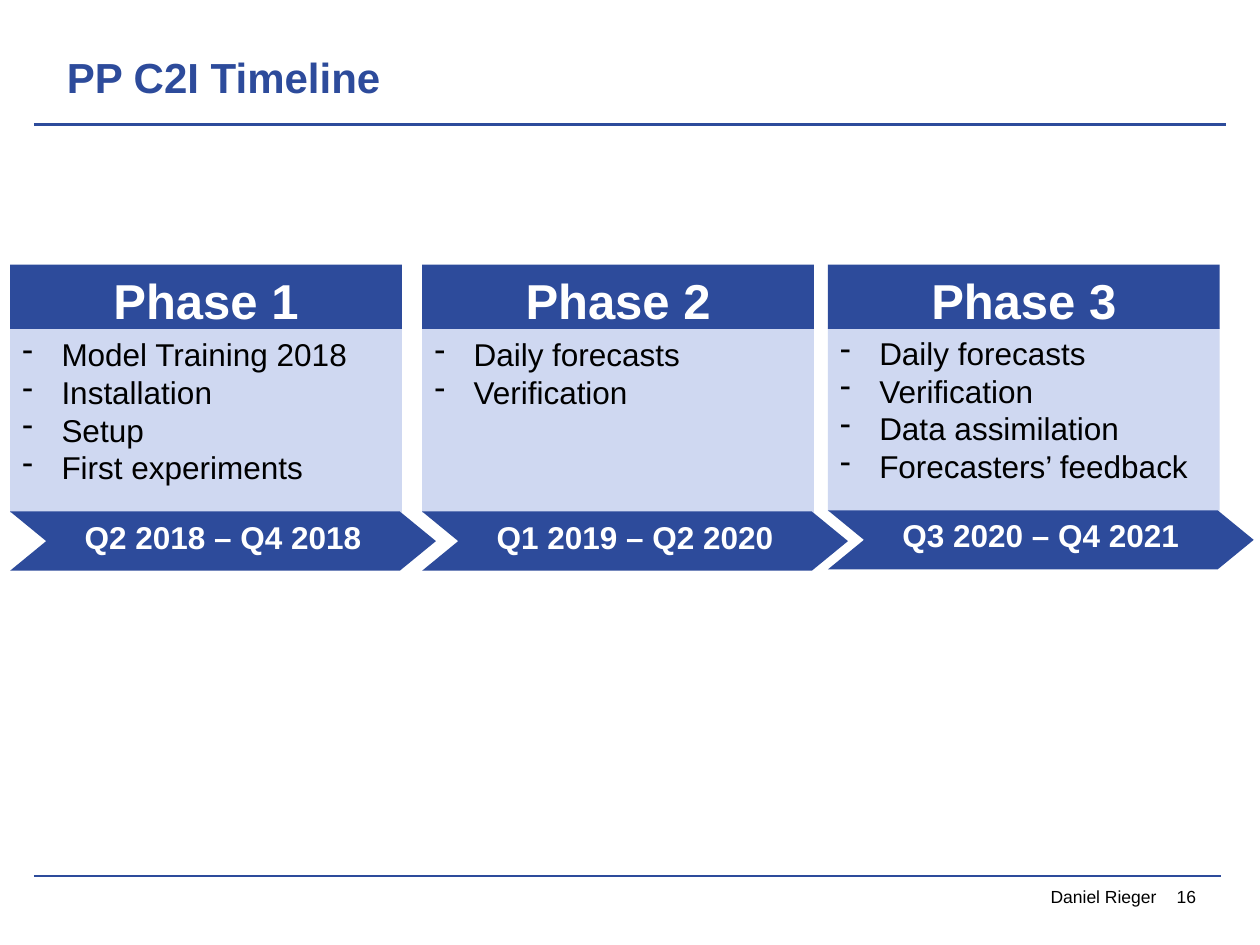
from dataclasses import dataclass

import pptx
import pptx.dml.color
import pptx.enum.shapes
import pptx.enum.text
import pptx.oxml
import pptx.oxml.ns
import pptx.util

Inches, Pt = pptx.util.Inches, pptx.util.Pt
RGBColor = pptx.dml.color.RGBColor
MSO_SHAPE = pptx.enum.shapes.MSO_SHAPE
ANCHOR, ALIGN = pptx.enum.text.MSO_ANCHOR, pptx.enum.text.PP_ALIGN
NSDECLS = pptx.oxml.ns.nsdecls("a")

BLUE = RGBColor(0x2D, 0x4B, 0x9B)
PALE_BLUE = RGBColor(0xCF, 0xD8, 0xF1)
WHITE = RGBColor(0xFF, 0xFF, 0xFF)
BLACK = RGBColor(0, 0, 0)

HEADER_TOP, HEADER_H = 2.1, 0.51
BODY_W, BODY_H = 3.11, 1.46
CHEVRON_W, CHEVRON_H = 3.38, 0.47
CHEVRON_OFFSET = 1.45


@dataclass
class Phase:
    left: float
    body_top: float
    name: str
    tasks: list[str]
    period: str


PHASES = [
    Phase(0.08, 2.61, "Phase 1",
          ["Model Training 2018", "Installation", "Setup", "First experiments"],
          "Q2 2018 – Q4 2018"),
    Phase(3.35, 2.61, "Phase 2",
          ["Daily forecasts", "Verification"],
          "Q1 2019 – Q2 2020"),
    Phase(6.57, 2.6, "Phase 3",
          ["Daily forecasts", "Verification", "Data assimilation", "Forecasters’ feedback"],
          "Q3 2020 – Q4 2021"),
]


def place(s, left: float, top: float, width: float, height: float) -> None:
    s.left, s.top = Inches(left), Inches(top)
    s.width, s.height = Inches(width), Inches(height)


def set_text(s, lines: list[str], *, size: float, color: RGBColor, bold: bool = False,
             align=ALIGN.LEFT, anchor=ANCHOR.TOP, top: float = 0.05, bottom: float = 0,
             bullet: str = "", tab: float = 0) -> None:
    tf = s.text_frame
    tf.word_wrap = True
    tf.auto_size = pptx.enum.text.MSO_AUTO_SIZE.NONE
    tf.vertical_anchor = anchor
    tf.margin_left = tf.margin_right = Inches(0.1)
    tf.margin_top, tf.margin_bottom = Inches(top), Inches(bottom)
    for i, line in enumerate(lines):
        p = tf.add_paragraph() if i else tf.paragraphs[0]
        p.alignment = align
        p.space_before = Pt(0)
        r = p.add_run()
        r.text = line
        r.font.name, r.font.size, r.font.bold = "Arial", Pt(size), bold
        r.font.color.rgb = color
        pPr = p._p.get_or_add_pPr()
        if bullet:
            pPr.set("marL", str(Inches(0.31)))
            pPr.set("indent", str(-Inches(0.31)))
            pPr.append(pptx.oxml.parse_xml(f'<a:buChar {NSDECLS} char="{bullet}"/>'))
        if tab:
            pPr.append(pptx.oxml.parse_xml(
                f'<a:tabLst {NSDECLS}><a:tab pos="{Inches(tab)}" algn="l"/></a:tabLst>'))


def add_box(slide, kind, left: float, top: float, width: float, height: float,
            fill: RGBColor):
    s = slide.shapes.add_shape(kind, Inches(left), Inches(top), Inches(width), Inches(height))
    s.shadow.inherit = False
    s.fill.solid()
    s.fill.fore_color.rgb = fill
    s.line.fill.background()
    return s


def add_rule(slide, y: float, right: float, width: float) -> None:
    s = slide.shapes.add_connector(pptx.enum.shapes.MSO_CONNECTOR.STRAIGHT,
                                   Inches(0.27), Inches(y), Inches(right), Inches(y))
    s.line.color.rgb = BLUE
    s.line.width = Pt(width)
    s._element.spPr.append(pptx.oxml.parse_xml(f"<a:effectLst {NSDECLS}/>"))


def add_phase(slide, phase: Phase) -> None:
    body = add_box(slide, MSO_SHAPE.RECTANGLE, phase.left, phase.body_top,
                   BODY_W, BODY_H, PALE_BLUE)
    set_text(body, phase.tasks, size=18, color=BLACK, bullet="-")

    header = add_box(slide, MSO_SHAPE.RECTANGLE, phase.left, HEADER_TOP,
                     BODY_W, HEADER_H, BLUE)
    set_text(header, [phase.name], size=28, color=WHITE, bold=True, align=ALIGN.CENTER)

    chevron = add_box(slide, MSO_SHAPE.CHEVRON, phase.left, phase.body_top + CHEVRON_OFFSET,
                      CHEVRON_W, CHEVRON_H, BLUE)
    chevron.adjustments[0] = 0.61
    set_text(chevron, [phase.period], size=18, color=WHITE, bold=True, align=ALIGN.CENTER)


def main() -> None:
    prs = pptx.Presentation()
    prs.slide_width, prs.slide_height = Inches(10), Inches(7.5)
    slide = prs.slides.add_slide(prs.slide_layouts.get_by_name("Title Only"))

    title = slide.shapes.title
    place(title, 0.43, 0.36, 9.14, 0.47)
    set_text(title, ["PP C2I Timeline"], size=24, color=BLUE, bold=True,
             anchor=ANCHOR.BOTTOM, bottom=0.02)

    add_rule(slide, 0.99, 9.73, 2)
    add_rule(slide, 6.95, 9.69, 1.2)
    footer = slide.shapes.add_textbox(Inches(8.24), Inches(6.98), Inches(1.49), Inches(0.27))
    set_text(footer, ["Daniel Rieger\t16"], size=10, color=BLACK, tab=1)

    for phase in PHASES:
        add_phase(slide, phase)
    prs.save("out.pptx")


if __name__ == "__main__":
    main()
